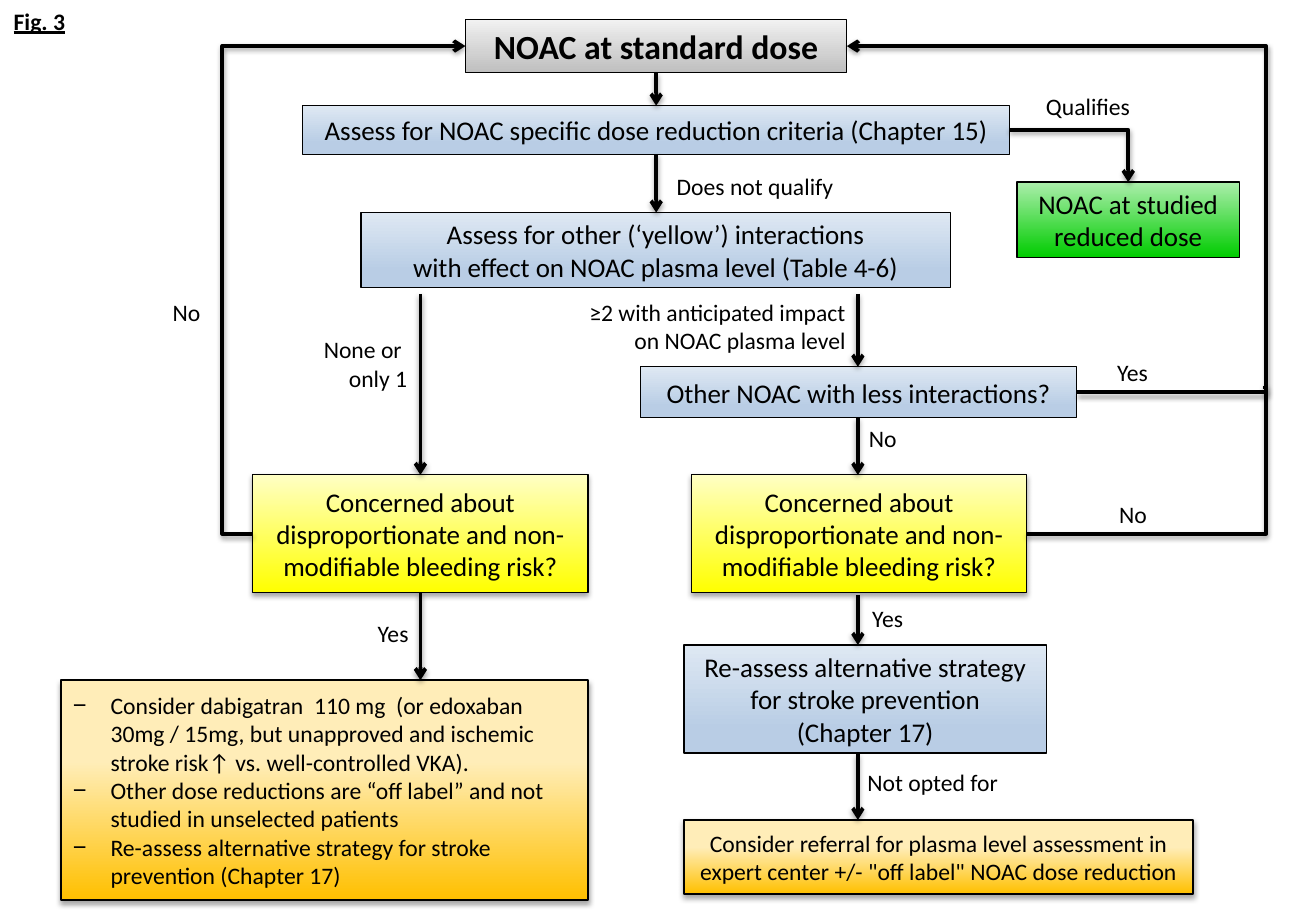
"""Build the flow chart for choosing a NOAC dose."""
from dataclasses import dataclass, field

from lxml.etree import SubElement
from pptx import Presentation
from pptx.dml.color import RGBColor
from pptx.enum.shapes import MSO_CONNECTOR, MSO_SHAPE
from pptx.enum.text import MSO_ANCHOR, MSO_AUTO_SIZE, PP_ALIGN
from pptx.oxml.ns import qn
from pptx.util import Inches, Pt

RECT = MSO_SHAPE.RECTANGLE
ELBOW, STRAIGHT = MSO_CONNECTOR.ELBOW, MSO_CONNECTOR.STRAIGHT
LEFT, CENTER, RIGHT = PP_ALIGN.LEFT, PP_ALIGN.CENTER, PP_ALIGN.RIGHT
MIDDLE, FIXED = MSO_ANCHOR.MIDDLE, MSO_AUTO_SIZE.NONE


@dataclass(frozen=True)
class Theme:
    """Hold the fonts, sizes and colours."""
    font: str = "Calibri"
    ink: str = "000000"
    head: int = 20
    node: int = 16
    small: int = 14
    arrow: float = 2.25
    indent: float = 0.31
    # Each fill: top colour, its stop, bottom colour, its stop, outline, shadow
    fills: dict = field(default_factory=lambda: {
        "gray": ("F1F1F1", 0, "BFBFBF", 1, 0.75, False),
        "blue": ("DEE8F3", 0, "B9CDE5", 0.77, 0.75, False),
        "green": ("ABEEAB", 0, "00CC00", 1, 1, False),
        "yellow": ("FFFFC4", 0, "FFFF00", 1, 0.75, True),
        "orange": ("FFEDB8", 0.37, "FFC000", 1, 1, True),
    })


THEME = Theme()
RISK = "Concerned about disproportionate and non-modifiable bleeding risk?"
FIGURE = ("Fig. 3", (0.01, 0, 0.63, 0.34))
ADVICE = [
    "Consider dabigatran  110 mg  (or edoxaban\n30mg / 15mg, but unapproved and "
    "ischemic stroke risk↑ vs. well-controlled VKA).",
    "Other dose reductions are “off label” and not studied in unselected patients",
    "Re-assess alternative strategy for stroke prevention (Chapter 17)",
]
ADVICE_AT = (0.5, 5.6, 4.34, 1.81)
NODES = {
    "start": ("NOAC at standard dose", (3.83, 0.16, 3.14, 0.44), "gray",
              THEME.head, True),
    "assess": ("Assess for NOAC specific dose reduction criteria (Chapter 15)",
               (2.49, 0.87, 5.82, 0.4), "blue", THEME.node, False),
    "effect": ("Assess for other (‘yellow’) interactions\n"
               "with effect on NOAC plasma level (Table 4-6)",
               (2.97, 1.75, 4.85, 0.62), "blue", THEME.node, False),
    "reduced": ("NOAC at studied reduced dose", (8.37, 1.5, 1.83, 0.62),
                "green", THEME.node, False),
    "other": ("Other NOAC with less interactions?", (5.27, 3.02, 3.59, 0.42),
              "blue", THEME.node, False),
    "risk one": (RISK, (2.08, 3.91, 2.76, 0.97), "yellow", THEME.node, False),
    "risk two": (RISK, (5.69, 3.91, 2.76, 0.97), "yellow", THEME.node, False),
    "plan": ("Re-assess alternative strategy for stroke prevention\n(Chapter 17)",
             (5.63, 5.31, 2.98, 0.89), "blue", THEME.node, False),
    "refer": ("Consider referral for plasma level assessment in expert center "
              "+/- \"off label\" NOAC dose reduction",
              (5.63, 6.75, 4.19, 0.61), "orange", THEME.small, False),
}
LABELS = [
    ("Qualifies", (8.51, 0.7, 0.9, 0.34), LEFT),
    ("Does not qualify", (5.47, 1.36, 1.51, 0.34), LEFT),
    ("≥2 with anticipated impact\non NOAC plasma level", (4.73, 2.4, 2.33, 0.57), RIGHT),
    ("None or \nonly 1", (2.56, 2.71, 0.89, 0.57), RIGHT),
    ("No", (1.32, 2.4, 0.43, 0.34), CENTER),
    ("No", (7.05, 3.44, 0.43, 0.34), CENTER),
    ("No", (9.11, 4.06, 0.43, 0.34), CENTER),
    ("Not opted for", (7.04, 6.27, 1.29, 0.34), LEFT),
    ("Yes", (7.08, 4.92, 0.46, 0.34), LEFT),
    ("Yes", (3.01, 5.04, 0.46, 0.34), LEFT),
    ("Yes", (9.09, 2.89, 0.46, 0.34), CENTER),
]
MID_X, LEFT_X, RIGHT_X = 5.4, 3.46, 7.06
LANE_LEFT, LANE_RIGHT = 1.83, 10.42
DROPS = [
    (MID_X, "start", "assess", 0), (MID_X, "assess", "effect", 0),
    (LEFT_X, "effect", "risk one", 0.05), (RIGHT_X, "effect", "other", 0.05),
    (RIGHT_X, "other", "risk two", 0), (LEFT_X, "risk one", "advice", 0),
    (RIGHT_X, "risk two", "plan", 0.02), (RIGHT_X, "plan", "refer", 0.01),
]


def color(code):
    """Turn a hex code into a colour."""
    return RGBColor.from_string(code)


def write(shape, text, size=THEME.small, align=CENTER, bold=False,
          under=False, wrap=True, bullet=None):
    """Put text, one string or a list of paragraphs, into a shape."""
    frame = shape.text_frame
    frame.word_wrap, frame.auto_size = wrap, FIXED
    frame.vertical_anchor = MIDDLE
    frame.margin_left = frame.margin_right = Inches(0.1)
    frame.margin_top = frame.margin_bottom = Inches(0.04)
    for i, line in enumerate([text] if isinstance(text, str) else text):
        para = frame.add_paragraph() if i else frame.paragraphs[0]
        para.text, para.alignment = line, align
        para.space_before = Pt(0)
        for run in para.runs:
            font = run.font
            font.name, font.size = THEME.font, Pt(size)
            font.bold, font.underline = bold, under
            font.color.rgb = color(THEME.ink)
        for gap in para._p.findall(qn("a:br")):
            SubElement(gap, qn("a:rPr"), sz=str(size * 100))
        if bullet:
            props = para._p.get_or_add_pPr()
            props.set("marL", str(Inches(THEME.indent)))
            props.set("indent", str(-Inches(THEME.indent)))
            SubElement(props, qn("a:buChar"), char=bullet)


def shade(shape, alpha=None, drop=0):
    """Set a soft shadow below a shape, or none."""
    effects = SubElement(shape._element.spPr, qn("a:effectLst"))
    if alpha:
        outer = SubElement(effects, qn("a:outerShdw"), blurRad="40000",
                           dist=str(drop), dir="5400000", rotWithShape="0")
        tone = SubElement(outer, qn("a:srgbClr"), val=THEME.ink)
        SubElement(tone, qn("a:alpha"), val=str(alpha * 1000))


def paint(shape, kind):
    """Fill and outline a node."""
    top, high, base, low, width, lifted = THEME.fills[kind]
    shape.fill.gradient()
    shape.fill.gradient_angle = 270
    for stop, code, place in zip(shape.fill.gradient_stops, (top, base), (high, low)):
        stop.color.rgb, stop.position = color(code), place
    shape.line.color.rgb, shape.line.width = color(THEME.ink), Pt(width)
    shade(shape, 35 if lifted else None, 23000)


def place(shape, spot):
    """Move a placeholder."""
    shape.left, shape.top, shape.width, shape.height = map(Inches, spot)


def link(slide, start, end, lane=None, tip=True):
    """Draw a line, bent once, or twice by way of a lane."""
    straight = lane is None and abs(start[0] - end[0]) < 0.05
    line = slide.shapes.add_connector(STRAIGHT if straight else ELBOW,
                                      *map(Inches, start + end))
    line.line.color.rgb, line.line.width = color(THEME.ink), Pt(THEME.arrow)
    if tip:
        SubElement(line.line._get_or_add_ln(), qn("a:tailEnd"), type="arrow")
    geom = line._element.spPr.find(qn("a:prstGeom"))
    if lane is not None:
        ratio = (lane - start[0]) / (end[0] - start[0])
        SubElement(geom.find(qn("a:avLst")), qn("a:gd"), name="adj1",
                   fmla=f"val {round(ratio * 100000)}")
    elif not straight:
        geom.set("prst", "bentConnector2")
    shade(line, 38, 20000)


def side(spot, right=True):
    """Give the middle of a node's right or left edge."""
    x, y, width, height = spot
    return (x + width * right, y + height / 2)


def main():
    """Build and save the slide."""
    deck = Presentation()
    deck.slide_width, deck.slide_height = Inches(10.83), Inches(7.5)
    slide = deck.slides.add_slide(deck.slide_layouts[1])
    title, body = slide.placeholders
    place(title, FIGURE[1])
    write(title, FIGURE[0], bold=True, under=True, wrap=False)
    place(body, ADVICE_AT)
    paint(body, "orange")
    write(body, ADVICE, align=LEFT, bullet="−")

    spots = {"advice": ADVICE_AT}
    for name, (text, spot, kind, size, bold) in NODES.items():
        spots[name] = spot
        node = slide.shapes.add_shape(RECT, *map(Inches, spot))
        paint(node, kind)
        write(node, text, size=size, bold=bold)

    for x, upper, lower, gap in DROPS:
        top = spots[upper][1] + spots[upper][3] + gap
        link(slide, (x, top), (x, spots[lower][1]))
    start, reduced = spots["start"], spots["reduced"]
    link(slide, side(spots["risk one"], False), side(start, False), LANE_LEFT)
    link(slide, side(spots["other"]), side(start), LANE_RIGHT)
    link(slide, side(spots["risk two"]), (10.39, 3.19), LANE_RIGHT, tip=False)
    link(slide, side(spots["assess"]), (reduced[0] + reduced[2] / 2, reduced[1]))

    for text, spot, align in LABELS:
        label = slide.shapes.add_textbox(*map(Inches, spot))
        write(label, text, align=align, wrap=False)
    deck.save("out.pptx")


if __name__ == "__main__":
    main()
